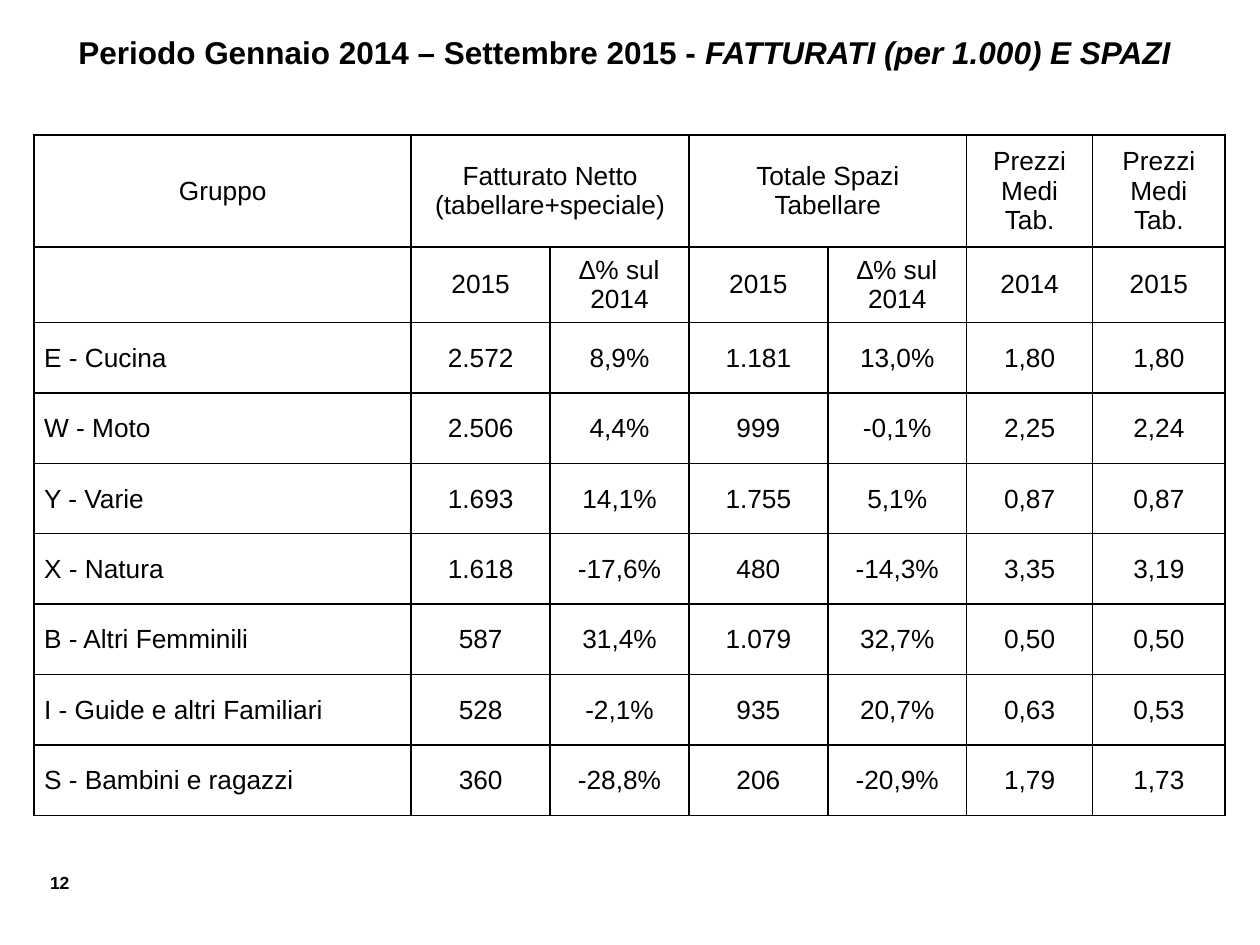
"""Build the slide with turnover and space figures by magazine group."""
import pptx
import pptx.chart.data
import pptx.dml.color
import pptx.enum.text
import pptx.oxml
import pptx.oxml.ns
import pptx.util

Cm = pptx.util.Cm
Pt = pptx.util.Pt
ALIGN = pptx.enum.text.PP_ALIGN
ANCHOR = pptx.enum.text.MSO_ANCHOR
HUES = {"ink": "000000"}
WIDTHS = [7.6] + [2.8] * 4 + [2.54, 2.67]
HEIGHTS = [2.26, 1.52] + [1.42] * 7
ROWS = [
    ["Gruppo", "Fatturato Netto (tabellare+speciale)", "", "Totale Spazi Tabellare", "",
     "Prezzi Medi Tab.", "Prezzi Medi Tab."],
    ["", "2015", "∆% sul 2014", "2015", "∆% sul 2014", "2014", "2015"],
    ["E - Cucina", "2.572", "8,9%", "1.181", "13,0%", "1,80", "1,80"],
    ["W - Moto", "2.506", "4,4%", "999", "-0,1%", "2,25", "2,24"],
    ["Y - Varie", "1.693", "14,1%", "1.755", "5,1%", "0,87", "0,87"],
    ["X - Natura", "1.618", "-17,6%", "480", "-14,3%", "3,35", "3,19"],
    ["B - Altri Femminili", "587", "31,4%", "1.079", "32,7%", "0,50", "0,50"],
    ["I - Guide e altri Familiari", "528", "-2,1%", "935", "20,7%", "0,63", "0,53"],
    ["S - Bambini e ragazzi", "360", "-28,8%", "206", "-20,9%", "1,79", "1,73"],
]


def write(para, text, size, **style):
    run = para.add_run()
    run.text = text
    for name, value in {"name": "Arial", "size": Pt(size), **style}.items():
        setattr(run.font, name, value)
    run.font.color.rgb = pptx.dml.color.RGBColor.from_string(HUES["ink"])


def edge(cell):
    props = cell._tc.get_or_add_tcPr()
    for side in ("lnL", "lnR", "lnT", "lnB"):
        props.append(pptx.oxml.parse_xml(
            f'<a:{side} {pptx.oxml.ns.nsdecls("a")} w="{Pt(1)}"><a:solidFill>'
            f'<a:srgbClr val="{HUES["ink"]}"/></a:solidFill></a:{side}>'))
    cell.fill.background()


deck = pptx.Presentation()
deck.slide_width, deck.slide_height = Cm(25.4), Cm(19.05)
slide = deck.slides.add_slide(deck.slide_layouts[5])

title = slide.shapes.title
place = {"left": Cm(0.69), "top": Cm(0.53), "width": Cm(23.8), "height": Cm(1.8)}
for name, value in place.items():
    setattr(title, name, value)
title.text_frame.vertical_anchor = ANCHOR.TOP
head = title.text_frame.paragraphs[0]
head.alignment = ALIGN.CENTER
write(head, "Periodo Gennaio 2014 – Settembre 2015 - ", 18, bold=True)
write(head, "FATTURATI (per 1.000) E SPAZI", 18, bold=True, italic=True)

frame = slide.shapes.add_table(len(ROWS), len(WIDTHS), Cm(0.69), Cm(2.72),
                               Cm(sum(WIDTHS)), Cm(sum(HEIGHTS)))
table = frame.table
for col, width in zip(table.columns, WIDTHS):
    col.width = Cm(width)
for row, height in zip(table.rows, HEIGHTS):
    row.height = Cm(height)
for start in (1, 3):
    table.cell(0, start).merge(table.cell(0, start + 1))

for r, row in enumerate(ROWS):
    for c, text in enumerate(row):
        cell = table.cell(r, c)
        edge(cell)
        body = r > 1
        label = body and c == 0
        side, rim = (0.03, 0.02) if body else (0.25, 0.13)
        form = {
            "vertical_anchor": ANCHOR.MIDDLE,
            "margin_left": Cm(0.2 if label else side),
            "margin_right": Cm(side),
            "margin_top": Cm(rim),
            "margin_bottom": Cm(0 if body else rim),
        }
        for name, value in form.items():
            setattr(cell, name, value)
        para = cell.text_frame.paragraphs[0]
        para.alignment = ALIGN.LEFT if label else ALIGN.CENTER
        if text:
            write(para, text, 15)

box = slide.shapes.add_textbox(Cm(0.48), Cm(17.45), Cm(1.17), Cm(0.69))
box.text_frame.word_wrap = True
page = box.text_frame.paragraphs[0]
page.alignment = ALIGN.RIGHT
write(page, "12", 10, bold=True)

deck.save("out.pptx")
